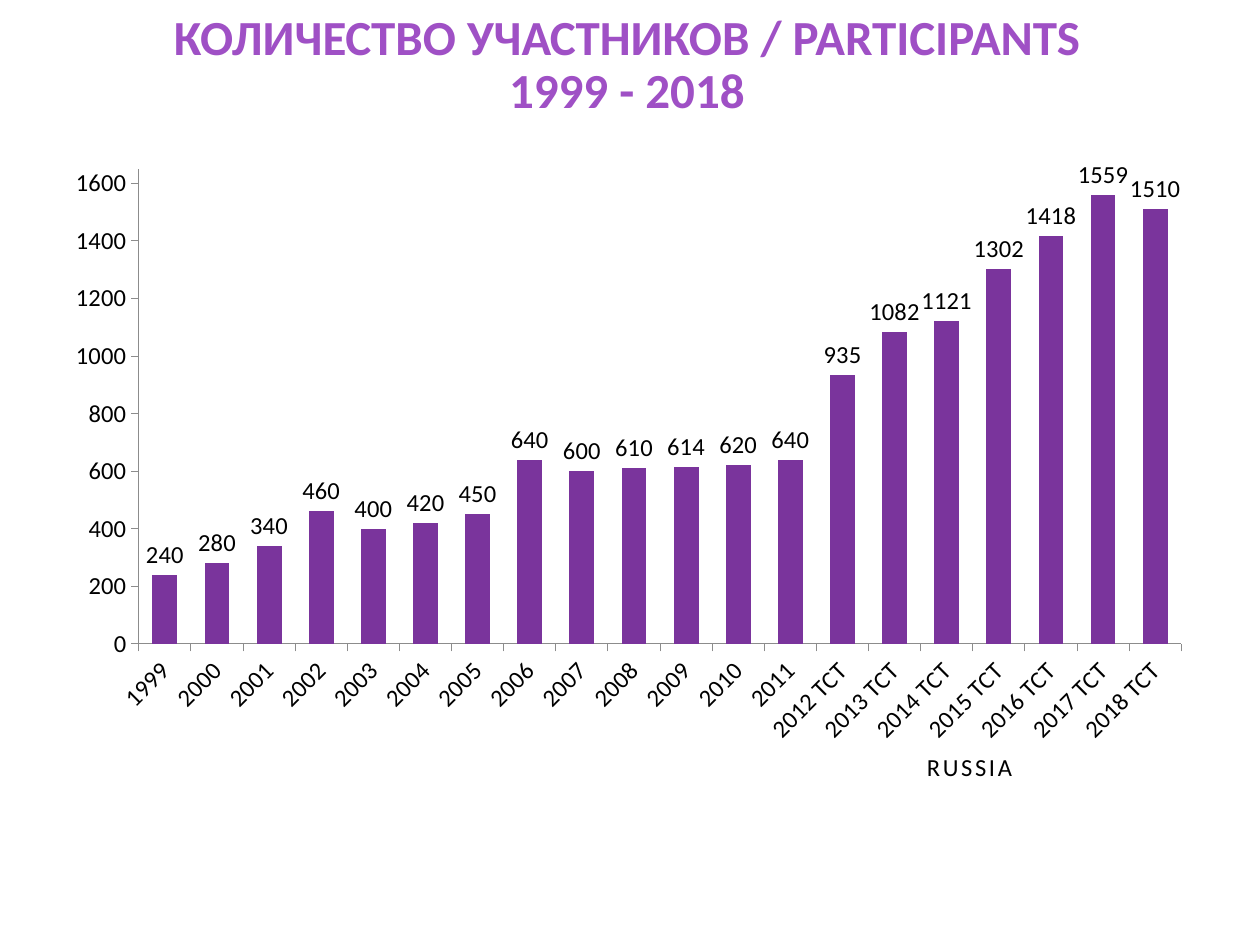
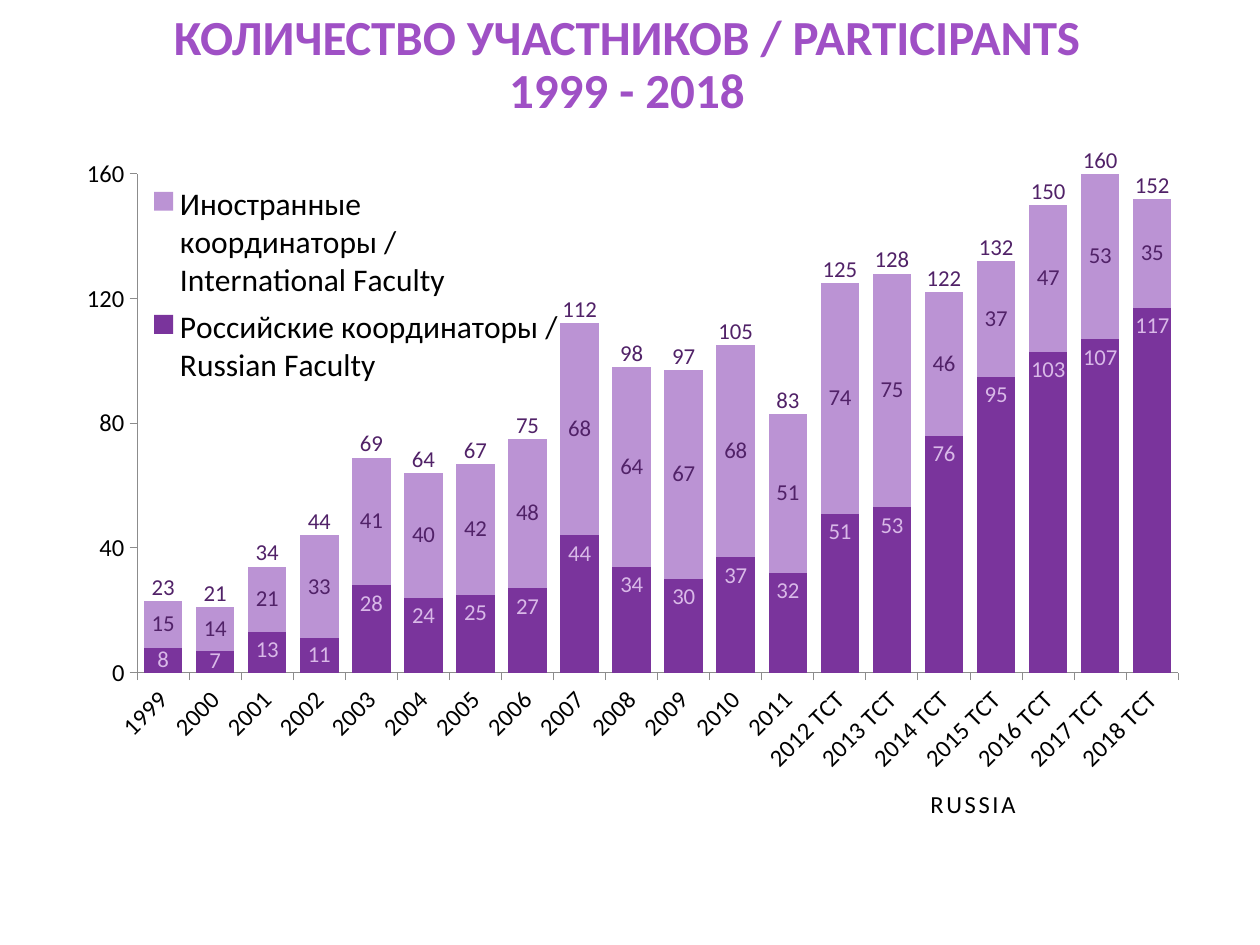
from dataclasses import dataclass

from lxml import etree
from pptx import Presentation
from pptx.chart.data import CategoryChartData
from pptx.dml.color import RGBColor
from pptx.enum import chart as charts, text
from pptx.oxml.ns import qn
from pptx.util import Pt


@dataclass(frozen=True)
class Theme:
    font: str = "Calibri"
    title: str = "9F50C5"
    ink: str = "000000"
    axis: str = "8C8C8C"
    dark: str = "7A349C"
    light: str = "BB93D4"
    on_dark: str = "D9B9E8"
    on_light: str = "512268"
    title_size: float = 28
    legend_size: float = 18
    axis_size: float = 14
    label_size: float = 13


THEME = Theme()
TITLE = "КОЛИЧЕСТВО УЧАСТНИКОВ / PARTICIPANTS\n1999 - 2018"
YEARS = [str(year) if year < 2012 else f"{year} TCT" for year in range(1999, 2019)]
PARTICIPANTS = [240, 280, 340, 460, 400, 420, 450, 640, 600, 610,
                614, 620, 640, 935, 1082, 1121, 1302, 1418, 1559, 1510]
RUSSIAN = [8, 7, 13, 11, 28, 24, 25, 27, 44, 34,
           30, 37, 32, 51, 53, 76, 95, 103, 107, 117]
INTERNATIONAL = [15, 14, 21, 33, 41, 40, 42, 48, 68, 64,
                 67, 68, 51, 74, 75, 46, 37, 47, 53, 35]
LOW_BARS = (0, 1, 3)

# Frames are left, top, width, height in points
FACULTY_CHART = (31, 90, 658, 374.4)
FACULTY_PLOT = (78.3, 99.4, 595, 285)
FACULTY_LEGEND = (84, 101, 243, 124)
FACULTY_MAX = 160

POSITION = charts.XL_LABEL_POSITION
CHARTS = [
    dict(kind=charts.XL_CHART_TYPE.COLUMN_CLUSTERED, frame=(30.2, 89.3, 658, 342.7),
         maximum=1650, step=200, gap=110, russia_at=(519, 426),
         series=[("Series 1", PARTICIPANTS, THEME.dark, THEME.axis_size,
                  THEME.ink, POSITION.OUTSIDE_END)]),
    dict(kind=charts.XL_CHART_TYPE.COLUMN_STACKED, frame=FACULTY_CHART,
         maximum=FACULTY_MAX, step=40, gap=35, russia_at=(521, 447),
         series=[("Российские координаторы / \nRussian Faculty", RUSSIAN, THEME.dark,
                  THEME.label_size, THEME.on_dark, POSITION.INSIDE_END),
                 ("Иностранные координаторы / \nInternational Faculty", INTERNATIONAL,
                  THEME.light, THEME.label_size, THEME.on_light, POSITION.CENTER)]),
]


def style_font(font, size, color, bold=False):
    font.name = THEME.font
    font.size = Pt(size)
    font.bold = bold
    font.color.rgb = RGBColor.from_string(color)


def place_part(part, index, frame, chart_frame, inner=False):
    """Give a plot area or legend a fixed frame, as fractions of its chart."""
    for old in part.findall(qn("c:layout")):
        part.remove(old)
    layout = etree.Element(qn("c:layout"))
    part.insert(index, layout)
    manual = etree.SubElement(layout, qn("c:manualLayout"))
    left, top, width, height = chart_frame
    settings = [("layoutTarget", "inner")] if inner else []
    settings += [("xMode", "edge"), ("yMode", "edge"),
                 ("x", (frame[0] - left) / width), ("y", (frame[1] - top) / height),
                 ("w", frame[2] / width), ("h", frame[3] / height)]
    for name, value in settings:
        etree.SubElement(manual, qn(f"c:{name}")).set("val", str(value))


presentation = Presentation()
presentation.slide_width, presentation.slide_height = Pt(720), Pt(540)

for chart_plan in CHARTS:
    slide = presentation.slides.add_slide(presentation.slide_layouts[5])

    title = slide.shapes.title
    title.left, title.top, title.width, title.height = Pt(0), Pt(0), Pt(720), Pt(72)
    frame = title.text_frame
    frame.auto_size = text.MSO_AUTO_SIZE.NONE
    frame.word_wrap = True
    frame.vertical_anchor = text.MSO_ANCHOR.MIDDLE
    frame.margin_left = frame.margin_bottom = Pt(0)
    frame.margin_top = frame.margin_right = Pt(3.6)
    paragraph = frame.paragraphs[0]
    paragraph.text = TITLE
    paragraph.alignment = text.PP_ALIGN.CENTER
    paragraph.line_spacing = 0.9
    for run in paragraph.runs:
        style_font(run.font, THEME.title_size, THEME.title, bold=True)

    data = CategoryChartData()
    data.categories = YEARS
    for name, values, *_ in chart_plan["series"]:
        data.add_series(name, values)
    chart = slide.shapes.add_chart(
        chart_plan["kind"], *map(Pt, chart_plan["frame"]), data).chart
    style_font(chart.font, THEME.legend_size, THEME.ink)
    chart.has_title = False
    chart.has_legend = False

    for axis in (chart.category_axis, chart.value_axis):
        axis.has_major_gridlines = False
        axis.major_tick_mark = charts.XL_TICK_MARK.OUTSIDE
        axis.minor_tick_mark = charts.XL_TICK_MARK.NONE
        axis.format.line.color.rgb = RGBColor.from_string(THEME.axis)
        axis.format.line.width = Pt(0.5)
        style_font(axis.tick_labels.font, THEME.axis_size, THEME.ink)
    chart.category_axis._element.txPr.bodyPr.set("rot", "-2700000")
    chart.value_axis.minimum_scale = 0
    chart.value_axis.maximum_scale = chart_plan["maximum"]
    chart.value_axis.major_unit = chart_plan["step"]

    plot = chart.plots[0]
    plot.vary_by_categories = False
    plot.gap_width = chart_plan["gap"]
    for series, (_, _, fill, size, color, position) in zip(plot.series, chart_plan["series"]):
        series.format.fill.solid()
        series.format.fill.fore_color.rgb = RGBColor.from_string(fill)
        labels = series.data_labels
        labels.show_value = True
        labels.position = position
        style_font(labels.font, size, color)

    # Text, left, top, width, height, size, colour, letter spacing
    notes = [("RUSSIA", *chart_plan["russia_at"], 70, 24, THEME.axis_size, THEME.ink, 150)]

    if chart_plan["kind"] == charts.XL_CHART_TYPE.COLUMN_STACKED:
        plot.overlap = 100
        for index in LOW_BARS:
            label = plot.series[0].points[index].data_label
            style_font(label.font, THEME.label_size, THEME.on_dark)
            label.position = POSITION.CENTER

        chart.has_legend = True
        chart.legend.position = charts.XL_LEGEND_POSITION.LEFT
        chart.legend.include_in_layout = False
        style_font(chart.legend.font, THEME.legend_size, THEME.ink)
        place_part(chart.legend._element, 1, FACULTY_LEGEND, FACULTY_CHART)
        place_part(plot._element.getparent(), 0, FACULTY_PLOT, FACULTY_CHART, inner=True)

        plot_left, plot_top, plot_width, plot_height = FACULTY_PLOT
        slot = plot_width / len(YEARS)
        for index, total in enumerate(map(sum, zip(RUSSIAN, INTERNATIONAL))):
            bar_top = plot_top + plot_height * (1 - total / FACULTY_MAX)
            notes.append((str(total), plot_left + slot * index, bar_top - 17, slot, 17,
                          THEME.label_size, THEME.on_light, 0))

    for words, left, top, width, height, size, color, spacing in notes:
        box = slide.shapes.add_textbox(Pt(left), Pt(top), Pt(width), Pt(height))
        frame = box.text_frame
        frame.word_wrap = True
        frame.vertical_anchor = text.MSO_ANCHOR.MIDDLE
        frame.margin_left = frame.margin_right = Pt(0)
        frame.margin_top = frame.margin_bottom = Pt(0)
        frame.text = words
        paragraph = frame.paragraphs[0]
        paragraph.alignment = text.PP_ALIGN.CENTER
        run = paragraph.runs[0]
        style_font(run.font, size, color)
        if spacing:
            run._r.get_or_add_rPr().set("spc", str(spacing))

presentation.save("out.pptx")
